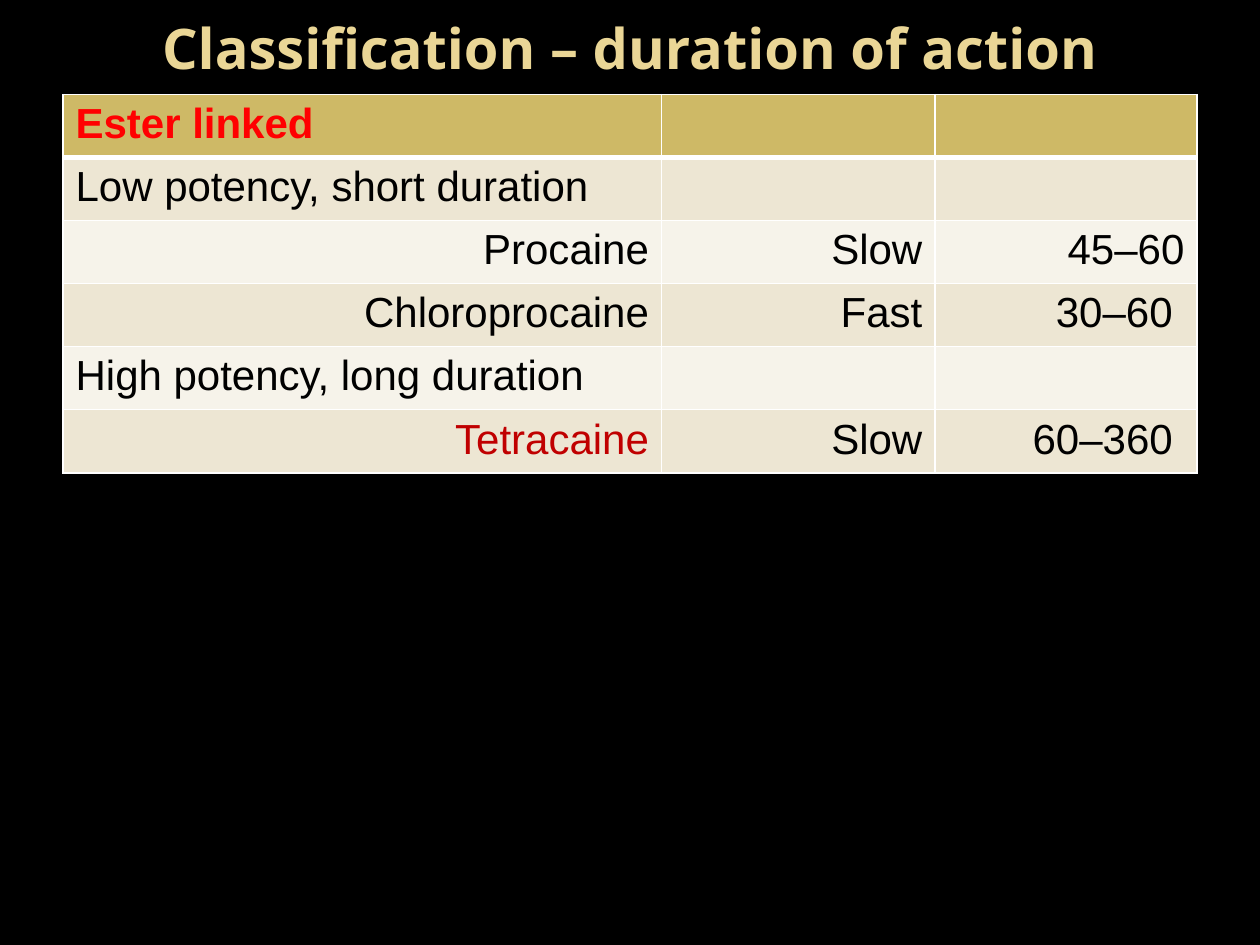
import pptx
import pptx.dml.color
import pptx.enum.text
import pptx.oxml
import pptx.oxml.ns
import pptx.util

Inches = pptx.util.Inches
Pt = pptx.util.Pt
RGBColor = pptx.dml.color.RGBColor
PP_ALIGN = pptx.enum.text.PP_ALIGN
MSO_ANCHOR = pptx.enum.text.MSO_ANCHOR

BLACK = RGBColor(0x00, 0x00, 0x00)
WHITE = RGBColor(0xFF, 0xFF, 0xFF)
RED = RGBColor(0xFF, 0x00, 0x00)
DARK_RED = RGBColor(0xC0, 0x00, 0x00)
PALE_GOLD = RGBColor(0xEA, 0xD6, 0x96)
GOLD = RGBColor(0xCE, 0xB9, 0x66)
SAND = RGBColor(0xED, 0xE6, 0xD3)
CREAM = RGBColor(0xF6, 0xF3, 0xEA)

ROWS = [
    ["Ester linked"],
    ["Low potency, short duration"],
    ["Procaine", "Slow", "45–60"],
    ["Chloroprocaine", "Fast", "30–60 "],
    ["High potency, long duration"],
    ["Tetracaine", "Slow", "60–360 "],
]
COL_WIDTHS = [4.75, 2.17, 2.08]
ROW_HEIGHT = 0.47
TEXT_COLORS = {"Ester linked": RED, "Tetracaine": DARK_RED}


class SlideBuilder:
    title_font = "Noto Sans"
    body_font = "Arial"
    title_size = 32
    body_size = 24

    def __init__(self, prs):
        self.s = prs.slides.add_slide(prs.slide_layouts[6])

    def background(self, color):
        fill = self.s.background.fill
        fill.solid()
        fill.fore_color.rgb = color

    def style(self, p, name, size, color, bold, align):
        p.alignment = align
        p.font.name = name
        p.font.size = Pt(size)
        p.font.color.rgb = color
        p.font.bold = bold

    def title(self, text, left, top, width, height):
        sp = self.s.shapes.add_textbox(
            Inches(left), Inches(top), Inches(width), Inches(height))
        tf = sp.text_frame
        tf.word_wrap = True
        tf.vertical_anchor = MSO_ANCHOR.MIDDLE
        p = tf.paragraphs[0]
        p.text = text
        self.style(p, self.title_font, self.title_size, PALE_GOLD, True,
                   PP_ALIGN.CENTER)

    def borders(self, cell, bottom):
        tcPr = cell._tc.get_or_add_tcPr()
        widths = {"lnL": 1, "lnR": 1, "lnT": 1, "lnB": bottom}
        for i, (tag, width) in enumerate(widths.items()):
            ln = pptx.oxml.parse_xml(
                f'<a:{tag} {pptx.oxml.ns.nsdecls("a")} w="{Pt(width)}">'
                f'<a:solidFill><a:srgbClr val="{WHITE}"/></a:solidFill>'
                f'</a:{tag}>')
            tcPr.insert(i, ln)

    def table(self, rows, col_widths, row_height, left, top):
        table = self.s.shapes.add_table(
            len(rows), len(col_widths), Inches(left), Inches(top),
            Inches(sum(col_widths)), Inches(row_height * len(rows))).table
        table.first_row = False
        table.horz_banding = False
        for col, width in zip(table.columns, col_widths):
            col.width = Inches(width)
        for r, texts in enumerate(rows):
            table.rows[r].height = Inches(row_height)
            is_header = r == 0
            band = GOLD if is_header else (SAND if r % 2 else CREAM)
            align = PP_ALIGN.LEFT if len(texts) == 1 else PP_ALIGN.RIGHT
            for c in range(len(col_widths)):
                cell = table.cell(r, c)
                cell.fill.solid()
                cell.fill.fore_color.rgb = band
                self.borders(cell, 3 if is_header else 1)
                if c < len(texts):
                    p = cell.text_frame.paragraphs[0]
                    p.text = texts[c]
                    self.style(p, self.body_font, self.body_size,
                               TEXT_COLORS.get(texts[c], BLACK), is_header,
                               align)


def main():
    prs = pptx.Presentation()
    prs.slide_width = Inches(10)
    prs.slide_height = Inches(7.5)
    slide = SlideBuilder(prs)
    slide.background(BLACK)
    slide.title("Classification – duration of action", 0.5, -0.25, 9, 1.25)
    slide.table(ROWS, COL_WIDTHS, ROW_HEIGHT, 0.5, 0.75)
    prs.save("out.pptx")


if __name__ == "__main__":
    main()
